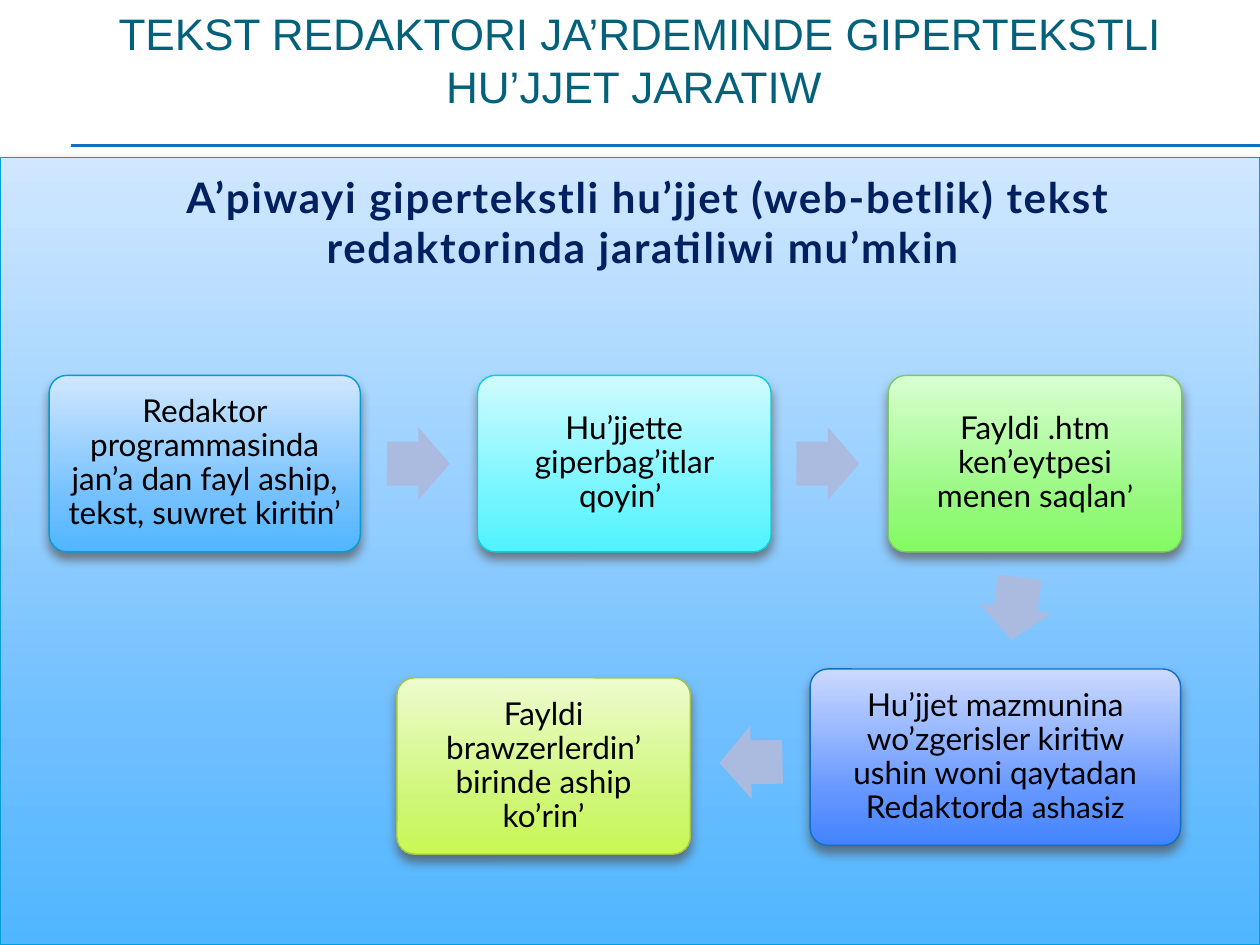
from copy import deepcopy
from dataclasses import dataclass

from lxml import etree
from pptx import Presentation
from pptx.dml.color import RGBColor
from pptx.enum.shapes import MSO_CONNECTOR, MSO_SHAPE
from pptx.enum.text import MSO_ANCHOR, PP_ALIGN
from pptx.oxml.ns import qn
from pptx.util import Inches, Pt

CENTER = PP_ALIGN.CENTER
TOP, MIDDLE = MSO_ANCHOR.TOP, MSO_ANCHOR.MIDDLE
RECT, ROUNDED, ARROW = MSO_SHAPE.RECTANGLE, MSO_SHAPE.ROUNDED_RECTANGLE, MSO_SHAPE.RIGHT_ARROW
STRAIGHT = MSO_CONNECTOR.STRAIGHT


@dataclass(frozen=True)
class Theme:
    title_font: str = "Arial"
    body_font: str = "Lato"
    title_size: float = 25.2
    heading_size: float = 24
    card_size: float = 18
    small_size: float = 17
    title: str = "04617B"
    heading: str = "002060"
    text: str = "000000"
    rule: str = "0F6FC6"
    arrow: str = "ABBBDF"
    shadow: str = "4E3B30"
    # Each palette: outline, then gradient colours at 0, 72 and 100 %
    sky: tuple = ("009DD9", "D0E7FF", "70BFFF", "50B6FF")
    cyan: tuple = ("0BD0D9", "D0FBFF", "70F5FF", "50F3FF")
    green: tuple = ("7CCA62", "D9FED1", "96F97E", "83FB62")
    blue: tuple = ("0F6FC6", "CBD9FF", "6395FF", "4183FF")
    lime: tuple = ("A5C249", "EDFCCF", "CEF673", "C9F853")


THEME = Theme()
GRADIENT_POSITIONS = (0, 0.72, 1)

TOP_ROW, BOTTOM_LEFT_ROW, BOTTOM_RIGHT_ROW = 2.98, 5.38, 5.31
CARD_WIDTH, CARD_HEIGHT = 2.33, 1.4
SIZE, SMALL = THEME.card_size, THEME.small_size

# Each card: left, top, width, palette, runs of (text, size)
CARDS = [
    (0.39, TOP_ROW, 2.47, THEME.sky,
     [("Redaktor programmasinda jan’a dan fayl aship, tekst, suwret kiritin’", SIZE)]),
    (3.79, TOP_ROW, CARD_WIDTH, THEME.cyan,
     [("Hu’jjette giperbag’itlar qoyin’ ", SIZE)]),
    (7.05, TOP_ROW, CARD_WIDTH, THEME.green,
     [("Fayldi .htm ken’eytpesi menen saqlan", SIZE), ("’", SMALL)]),
    (6.43, BOTTOM_RIGHT_ROW, 2.94, THEME.blue,
     [("Hu’jjet mazmunina wo’zgerisler kiritiw ushin woni qaytadan Redaktorda ", SIZE),
      ("ashasiz", SMALL)]),
    (3.15, BOTTOM_LEFT_ROW, CARD_WIDTH, THEME.lime,
     [("Fayldi brawzerlerdin’ birinde aship ko’rin’", SIZE)]),
]

# Each arrow: left, top, rotation
ARROWS = [(3.07, 3.39, 0), (6.32, 3.39, 0), (7.81, 4.54, 97.5), (5.71, 5.76, 178.8)]


def rgb(value):
    return RGBColor.from_string(value)


def add_box(page, kind, box):
    shape = page.shapes.add_shape(kind, *map(Inches, box))
    shape.shadow.inherit = False
    return shape


def paint(shape, palette):
    """Give a shape its outline, three-stop vertical gradient and soft shadow."""
    outline, *colors = palette
    shape.line.color.rgb = rgb(outline)
    shape.line.width = Pt(0.79)
    shape.fill.gradient()
    shape.fill.gradient_angle = 270
    properties = shape._element.spPr
    stop_list = properties.find(qn("a:gradFill")).find(qn("a:gsLst"))
    stop_list.append(deepcopy(stop_list[-1]))
    for stop, color, position in zip(shape.fill.gradient_stops, colors, GRADIENT_POSITIONS):
        stop.color.rgb = rgb(color)
        stop.position = position

    effects = properties.find(qn("a:effectLst"))
    shadow = etree.SubElement(effects, qn("a:outerShdw"), blurRad=str(Pt(6)),
                              dist=str(Pt(4)), dir="5400000", rotWithShape="0")
    color = etree.SubElement(shadow, qn("a:srgbClr"), val=THEME.shadow)
    etree.SubElement(color, qn("a:alpha"), val="60000")


def write(shape, runs, font, color, anchor, margins, bold=False):
    """Write one centred paragraph; margins are left, top, right, bottom in inches."""
    frame = shape.text_frame
    frame.word_wrap = True
    frame.vertical_anchor = anchor
    (frame.margin_left, frame.margin_top,
     frame.margin_right, frame.margin_bottom) = map(Inches, margins)
    para = frame.paragraphs[0]
    para.alignment = CENTER
    for text, size in runs:
        span = para.add_run()
        span.text = text
        span.font.name = font
        span.font.size = Pt(size)
        span.font.bold = bold
        span.font.color.rgb = rgb(color)
    return para


def add_title(page, box):
    title = page.shapes.add_textbox(*map(Inches, box))
    write(title, [("TEKST REDAKTORI JA’RDEMINDE GIPERTEKSTLI HU’JJET JARATIW ", THEME.title_size)],
          THEME.title_font, THEME.title, MIDDLE, (0.1, 0.05, 0.1, 0.05))


def add_rule(page, left, right, top):
    line = page.shapes.add_connector(
        STRAIGHT, Inches(left), Inches(top), Inches(right), Inches(top))
    line.line.color.rgb = rgb(THEME.rule)
    line.line.width = Pt(0.75)
    etree.SubElement(line._element.spPr, qn("a:effectLst"))


def add_panel(page, box):
    panel = add_box(page, RECT, box)
    paint(panel, THEME.sky)
    heading = "A’piwayi gipertekstli hu’jjet (web-betlik) tekst redaktorinda jaratiliwi mu’mkin "
    para = write(panel, [(heading, THEME.heading_size)], THEME.body_font, THEME.heading,
                 TOP, (0.5, 0.11, 0.2, 0.05), bold=True)
    para.runs[0].font._element.set("spc", "100")


def add_card(page, box, palette, runs):
    card = add_box(page, ROUNDED, box)
    card.adjustments[0] = 0.1
    paint(card, palette)
    para = write(card, runs, THEME.body_font, THEME.text, MIDDLE, (0.11,) * 4)
    para.line_spacing = 0.9


def add_arrow(page, box, rotation):
    arrow = add_box(page, ARROW, box)
    arrow.adjustments[0] = 0.6
    arrow.adjustments[1] = 0.5
    arrow.rotation = rotation
    arrow.fill.solid()
    arrow.fill.fore_color.rgb = rgb(THEME.arrow)
    arrow.line.fill.background()


def main():
    deck = Presentation()
    deck.slide_width, deck.slide_height = Inches(10), Inches(7.5)
    page = deck.slides.add_slide(deck.slide_layouts[6])

    for top in (1.15, 1.16):
        add_rule(page, 0.56, 10, top)
    add_title(page, (0.33, 0, 9.5, 0.94))
    add_panel(page, (0, 1.25, 10, 6.25))
    for left, top, width, palette, runs in CARDS:
        add_card(page, (left, top, width, CARD_HEIGHT), palette, runs)
    for left, top, rotation in ARROWS:
        add_arrow(page, (left, top, 0.5, 0.58), rotation)

    deck.save("out.pptx")


if __name__ == "__main__":
    main()
